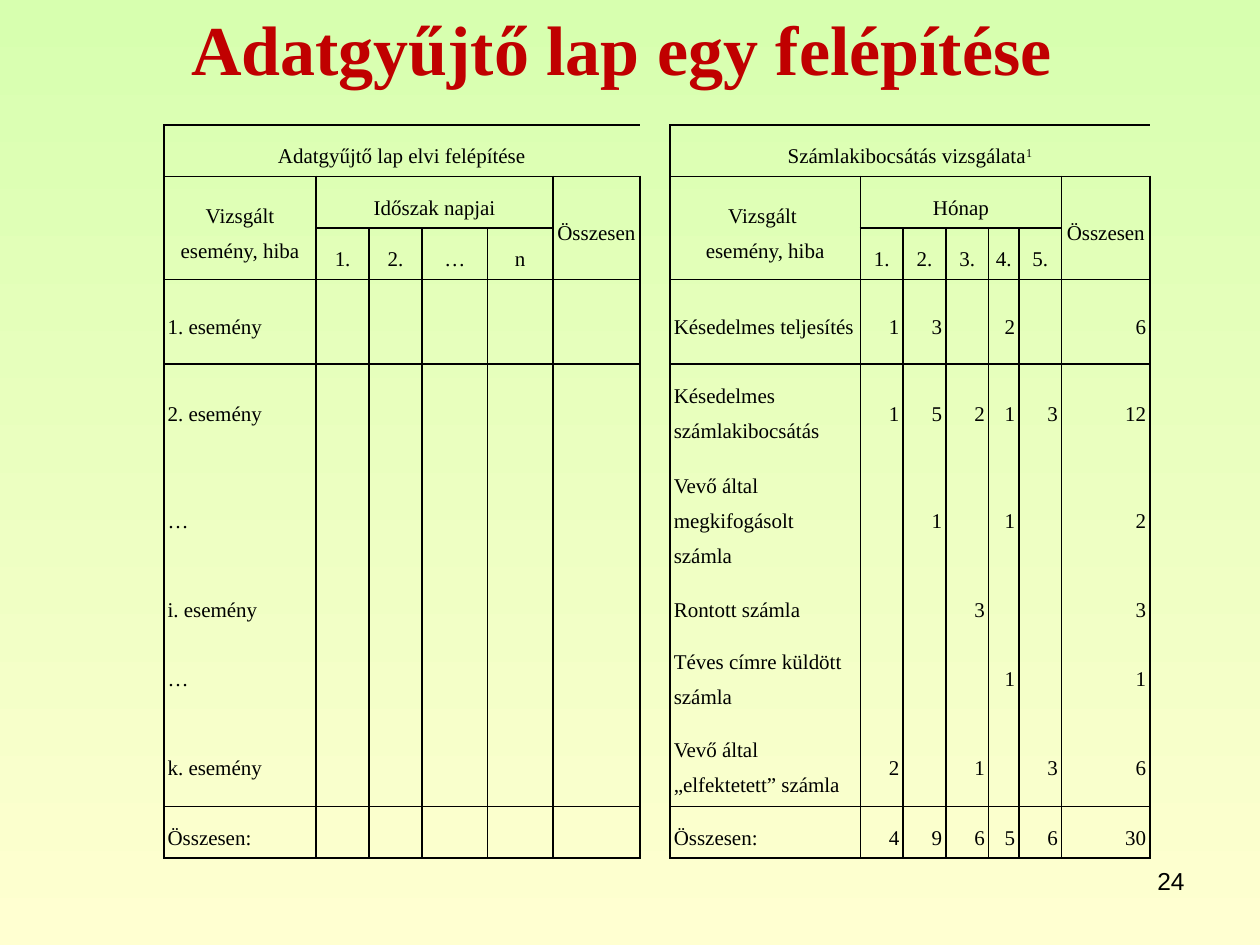
import itertools
from dataclasses import dataclass

import lxml.etree
import pptx
import pptx.dml.color
import pptx.enum.text
import pptx.oxml.ns
import pptx.util

Inches = pptx.util.Inches
ALIGN = pptx.enum.text.PP_ALIGN
ANCHOR = pptx.enum.text.MSO_ANCHOR

COLORS = {"top": "D7FFAF", "bottom": "FFFFD1", "title": "C00000", "ink": "000000"}
SLIDE_WIDTH, SLIDE_HEIGHT = 10, 7.5
SERIF = "Times New Roman"
NO_GRID_STYLE = "{2D5ABB26-0587-4C30-8999-92F81FD0307C}"
TABLE_LEFT, TABLE_TOP = 1.3, 0.99
COLUMNS = [1.21, 0.42, 0.42, 0.52, 0.52, 0.69, 0.13,
           1.51, 0.34, 0.34, 0.34, 0.24, 0.34, 0.7]
ROWS = [0.41, 0.41, 0.41, 0.67, 0.69, 0.94, 0.41, 0.69, 0.69, 0.41]
GAP_COLUMN = 6
BODY_ROW, TOTAL_ROW = 3, 9


@dataclass
class Sheet:
    """One data sheet: its first column, headings and body rows."""
    column: int
    title: str
    note: str
    event: str
    period: str
    periods: list[str]
    lines: list[list[str]]


@dataclass
class Block:
    """A bordered rectangle of cells, merged when it is a heading."""
    row: int
    column: int
    rows: int = 1
    columns: int = 1


SHEETS = [
    Sheet(0, "Adatgyűjtő lap elvi felépítése", "", "Vizsgált esemény, hiba",
          "Időszak napjai", ["1.", "2.", "…", "n"],
          [["1. esemény"], ["2. esemény"], ["…"], ["i. esemény"], ["…"],
           ["k. esemény"], ["Összesen:"]]),
    Sheet(7, "Számlakibocsátás vizsgálata", "1", "Vizsgált \nesemény, hiba",
          "Hónap", ["1.", "2.", "3.", "4.", "5."],
          [["Késedelmes teljesítés", "1", "3", "", "2", "", "6"],
           ["Késedelmes számlakibocsátás", "1", "5", "2", "1", "3", "12"],
           ["Vevő által megkifogásolt számla", "", "1", "", "1", "", "2"],
           ["Rontott számla", "", "", "3", "", "", "3"],
           ["Téves címre küldött számla", "", "", "", "1", "", "1"],
           ["Vevő által „elfektetett” számla", "2", "", "1", "", "3", "6"],
           ["Összesen:", "4", "9", "6", "5", "6", "30"]]),
]


def rgb(name: str) -> pptx.dml.color.RGBColor:
    return pptx.dml.color.RGBColor.from_string(COLORS[name])


def write(frame, text: str, *, size=12, font=SERIF, color="ink", bold=False,
          align=ALIGN.CENTER, spacing=None, note="") -> None:
    """Fill the first paragraph; a newline is a line break, a note is raised."""
    para = frame.paragraphs[0]
    para.alignment = align
    if spacing:
        para.line_spacing = spacing

    def add_span(content: str):
        span = para.add_run()
        span.text = content
        span.font.size = pptx.util.Pt(size)
        span.font.name = font
        span.font.bold = bold
        span.font.color.rgb = rgb(color)
        return span

    for number, line in enumerate(text.split("\n")):
        if number:
            para.add_line_break()
        add_span(line)
    if note:
        add_span(note).font._element.set("baseline", "30000")


def add_text(page, text: str, left: float, top: float, width: float,
             height: float, anchor=ANCHOR.TOP, **style) -> None:
    """Place a text box by shares of the slide's size."""
    box = page.shapes.add_textbox(
        Inches(left * SLIDE_WIDTH), Inches(top * SLIDE_HEIGHT),
        Inches(width * SLIDE_WIDTH), Inches(height * SLIDE_HEIGHT))
    box.text_frame.word_wrap = True
    box.text_frame.vertical_anchor = anchor
    write(box.text_frame, text, **style)


def add_border(cell, side: str) -> None:
    qn = pptx.oxml.ns.qn
    properties = cell._tc.get_or_add_tcPr()
    line = lxml.etree.SubElement(properties, qn(f"a:ln{side}"), w="12700")
    fill = lxml.etree.SubElement(line, qn("a:solidFill"))
    lxml.etree.SubElement(fill, qn("a:srgbClr"), val=COLORS["ink"])


def outline(table, block: Block) -> None:
    last_row = block.row + block.rows - 1
    last_column = block.column + block.columns - 1
    for row, column in itertools.product(range(block.row, last_row + 1),
                                         range(block.column, last_column + 1)):
        edges = {"L": column == block.column, "R": column == last_column,
                 "T": row == block.row, "B": row == last_row}
        for side, outer in edges.items():
            if outer:
                add_border(table.cell(row, column), side)


def fill_cell(table, row: int, column: int, text: str, align=ALIGN.CENTER,
              note="") -> None:
    cell = table.cell(row, column)
    cell.vertical_anchor = ANCHOR.MIDDLE
    cell.margin_left = cell.margin_right = Inches(0.03)
    write(cell.text_frame, text, align=align, spacing=1.5, note=note)


def merge(table, block: Block) -> None:
    table.cell(block.row, block.column).merge(
        table.cell(block.row + block.rows - 1, block.column + block.columns - 1))


def add_heading(table, block: Block, text: str, note="") -> None:
    if block.rows * block.columns > 1:
        merge(table, block)
    outline(table, block)
    fill_cell(table, block.row, block.column, text, note=note)


def draw_sheet(table, sheet: Sheet) -> None:
    first, count = sheet.column, len(sheet.periods)
    last = first + count + 1
    add_heading(table, Block(0, first, columns=count + 2), sheet.title, sheet.note)
    add_heading(table, Block(1, first, rows=2), sheet.event)
    add_heading(table, Block(1, first + 1, columns=count), sheet.period)
    add_heading(table, Block(1, last, rows=2), "Összesen")
    for column, period in enumerate(sheet.periods, first + 1):
        add_heading(table, Block(2, column), period)
    for column in range(first, last + 1):
        outline(table, Block(BODY_ROW, column, rows=TOTAL_ROW - BODY_ROW))
        outline(table, Block(TOTAL_ROW, column))
    for row, line in enumerate(sheet.lines, BODY_ROW):
        for column, text in enumerate(line, first):
            if text:
                align = ALIGN.LEFT if column == first else ALIGN.RIGHT
                fill_cell(table, row, column, text, align)


def add_data_table(page) -> None:
    table = page.shapes.add_table(
        len(ROWS), len(COLUMNS), Inches(TABLE_LEFT), Inches(TABLE_TOP),
        Inches(sum(COLUMNS)), Inches(sum(ROWS))).table
    table.first_row = table.horz_banding = False
    table._tbl.tblPr.find(pptx.oxml.ns.qn("a:tableStyleId")).text = NO_GRID_STYLE
    for column, width in zip(table.columns, COLUMNS):
        column.width = Inches(width)
    for row, height in zip(table.rows, ROWS):
        row.height = Inches(height)
    merge(table, Block(1, GAP_COLUMN, rows=2))
    for sheet in SHEETS:
        draw_sheet(table, sheet)
    for cell in table.iter_cells():
        cell.fill.background()


def main() -> None:
    deck = pptx.Presentation()
    deck.slide_width, deck.slide_height = Inches(SLIDE_WIDTH), Inches(SLIDE_HEIGHT)
    page = deck.slides.add_slide(deck.slide_layouts[6])
    backdrop = page.background.fill
    backdrop.gradient()
    backdrop.gradient_angle = 270
    for stop, name in zip(backdrop.gradient_stops, ("top", "bottom")):
        stop.color.rgb = rgb(name)
    add_text(page, "Adatgyűjtő lap egy felépítése ", 0, 0, 1, 0.1,
             anchor=ANCHOR.MIDDLE, size=40, color="title", bold=True)
    add_text(page, "24", 0.72, 0.91, 0.23, 0.07, size=14, font="Arial",
             align=ALIGN.RIGHT)
    add_data_table(page)
    deck.save("out.pptx")


if __name__ == "__main__":
    main()
